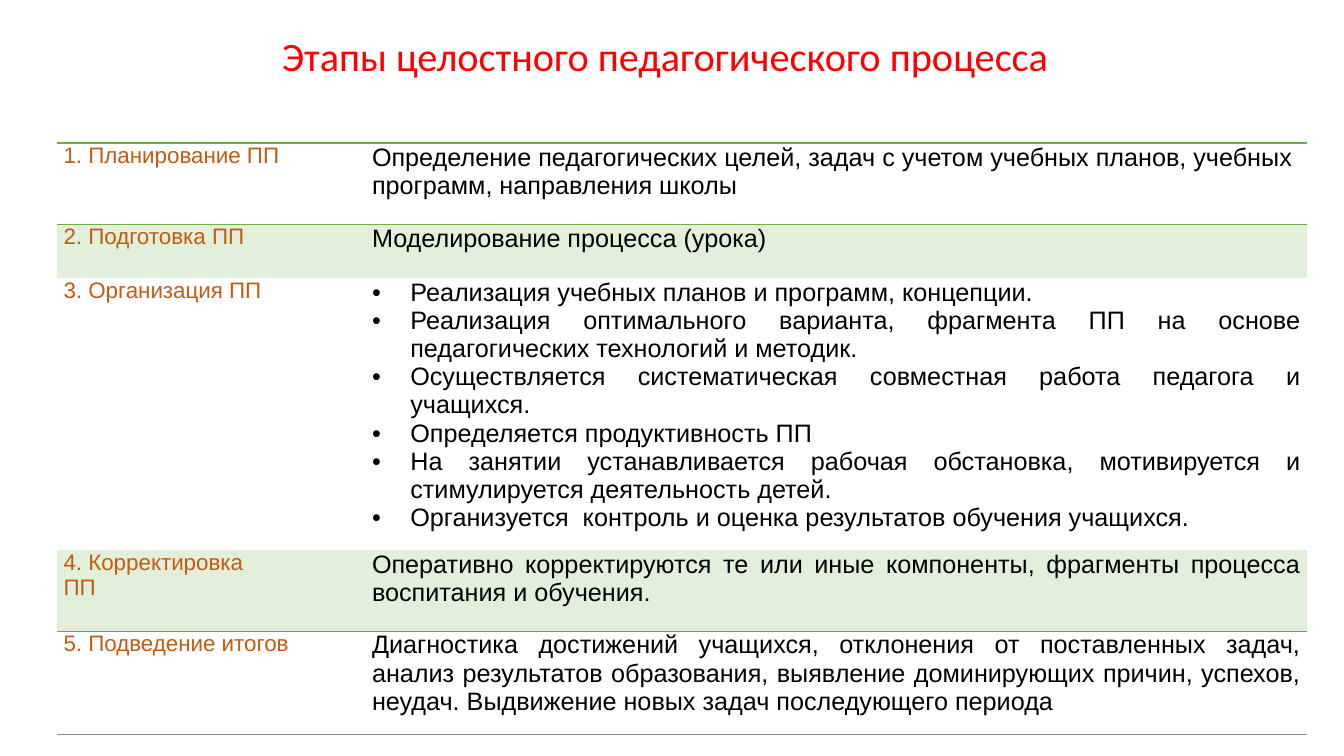
from lxml.etree import SubElement
from pptx import Presentation
from pptx.dml.color import RGBColor
from pptx.enum.text import MSO_ANCHOR as Anchor, PP_ALIGN as Align
from pptx.oxml.ns import qn
from pptx.util import Inches, Pt

SLIDE_W, SLIDE_H = Inches(13.33), Inches(7.5)
COLORS = {"title": "FF0000", "stage": "C55A11", "text": "000000",
          "tint": "E2EFDA", "green": "70AD47", "gray": "8C8C8C"}
BULLET_INDENT = Inches(0.38)

# Table grid in inches
TABLE_LEFT, TABLE_TOP = 0.57, 1.42
COLUMNS = [3.06, 9.33]
ROWS = [0.81, 0.53, 2.49, 0.8, 1.03]
TINTED_ROWS = {1, 3}
# Rule number (0 is the top edge of the table): colour, width in points
RULES = {0: ("green", 1.5), 1: ("green", 1), 4: ("gray", 0.75), 5: ("gray", 0.75)}

TITLE = "Этапы целостного педагогического процесса"
# Stage, its content, alignment, bulleted
STAGES = [
    (["1. Планирование ПП"],
     ["Определение педагогических целей, задач с учетом учебных планов, "
      "учебных программ, направления школы"], Align.LEFT, False),
    (["2. Подготовка ПП"], ["Моделирование процесса (урока)"], Align.LEFT, False),
    (["3. Организация ПП"],
     ["Реализация учебных планов и программ, концепции.",
      "Реализация оптимального варианта, фрагмента ПП на основе "
      "педагогических технологий и методик.",
      "Осуществляется систематическая совместная работа педагога и учащихся.",
      "Определяется продуктивность ПП",
      "На занятии устанавливается рабочая обстановка, мотивируется и "
      "стимулируется деятельность детей.",
      "Организуется  контроль и оценка результатов обучения учащихся."],
     Align.JUSTIFY, True),
    (["4. Корректировка", "ПП"],
     ["Оперативно корректируются те или иные компоненты, фрагменты процесса "
      "воспитания и обучения."], Align.JUSTIFY, False),
    (["5. Подведение итогов"],
     ["Диагностика достижений учащихся, отклонения от поставленных задач, "
      "анализ результатов образования, выявление доминирующих причин, успехов, "
      "неудач. Выдвижение новых задач последующего периода"],
     Align.JUSTIFY, False),
]


def write(frame, lines, font, size, color, align=Align.LEFT):
    frame.text = "\n".join(lines)
    frame.word_wrap = True
    for paragraph in frame.paragraphs:
        paragraph.alignment = align
        for run in paragraph.runs:
            run.font.name = font
            run.font.size = Pt(size)
            run.font.color.rgb = RGBColor.from_string(COLORS[color])


def add_bullets(frame):
    for paragraph in frame.paragraphs:
        props = paragraph._p.get_or_add_pPr()
        props.set("marL", str(BULLET_INDENT))
        props.set("indent", str(-BULLET_INDENT))
        SubElement(props, qn("a:buFont"), typeface="Arial")
        SubElement(props, qn("a:buChar"), char="•")


def set_borders(cell, top, bottom):
    props = cell._tc.get_or_add_tcPr()
    for side, rule in (("L", None), ("R", None), ("T", top), ("B", bottom)):
        line = SubElement(props, qn(f"a:ln{side}"))
        if rule:
            color, width = rule
            line.set("w", str(Pt(width)))
            fill = SubElement(line, qn("a:solidFill"))
            SubElement(fill, qn("a:srgbClr"), val=COLORS[color])
        else:
            SubElement(line, qn("a:noFill"))


def style_cell(cell, row):
    cell.margin_left = cell.margin_right = Inches(0.06)
    cell.margin_top = cell.margin_bottom = 0
    set_borders(cell, RULES.get(row), RULES.get(row + 1))
    if row in TINTED_ROWS:
        cell.fill.solid()
        cell.fill.fore_color.rgb = RGBColor.from_string(COLORS["tint"])
    else:
        cell.fill.background()


def add_title(slide):
    title = slide.shapes.add_textbox(Inches(2.7), Inches(0.4), Inches(9.72), Inches(0.35))
    frame = title.text_frame
    write(frame, [TITLE], "Calibri", 28.8, "title")
    frame.vertical_anchor = Anchor.MIDDLE
    frame.paragraphs[0].line_spacing = 0.9


def add_stages(slide):
    stages = slide.shapes.add_table(
        len(ROWS), len(COLUMNS), Inches(TABLE_LEFT), Inches(TABLE_TOP),
        Inches(sum(COLUMNS)), Inches(sum(ROWS))).table
    stages.first_row = stages.horz_banding = False
    for column, width in zip(stages.columns, COLUMNS):
        column.width = Inches(width)
    for row, (stage, content, align, bulleted) in enumerate(STAGES):
        stages.rows[row].height = Inches(ROWS[row])
        stage_cell, content_cell = stages.cell(row, 0), stages.cell(row, 1)
        write(stage_cell.text_frame, stage, "Arial", 16, "stage")
        write(content_cell.text_frame, content, "Arial", 18, "text", align)
        if bulleted:
            add_bullets(content_cell.text_frame)
        for cell in (stage_cell, content_cell):
            style_cell(cell, row)


def main():
    deck = Presentation()
    deck.slide_width, deck.slide_height = SLIDE_W, SLIDE_H
    slide = deck.slides.add_slide(deck.slide_layouts[6])
    add_title(slide)
    add_stages(slide)
    deck.save("out.pptx")


if __name__ == "__main__":
    main()
